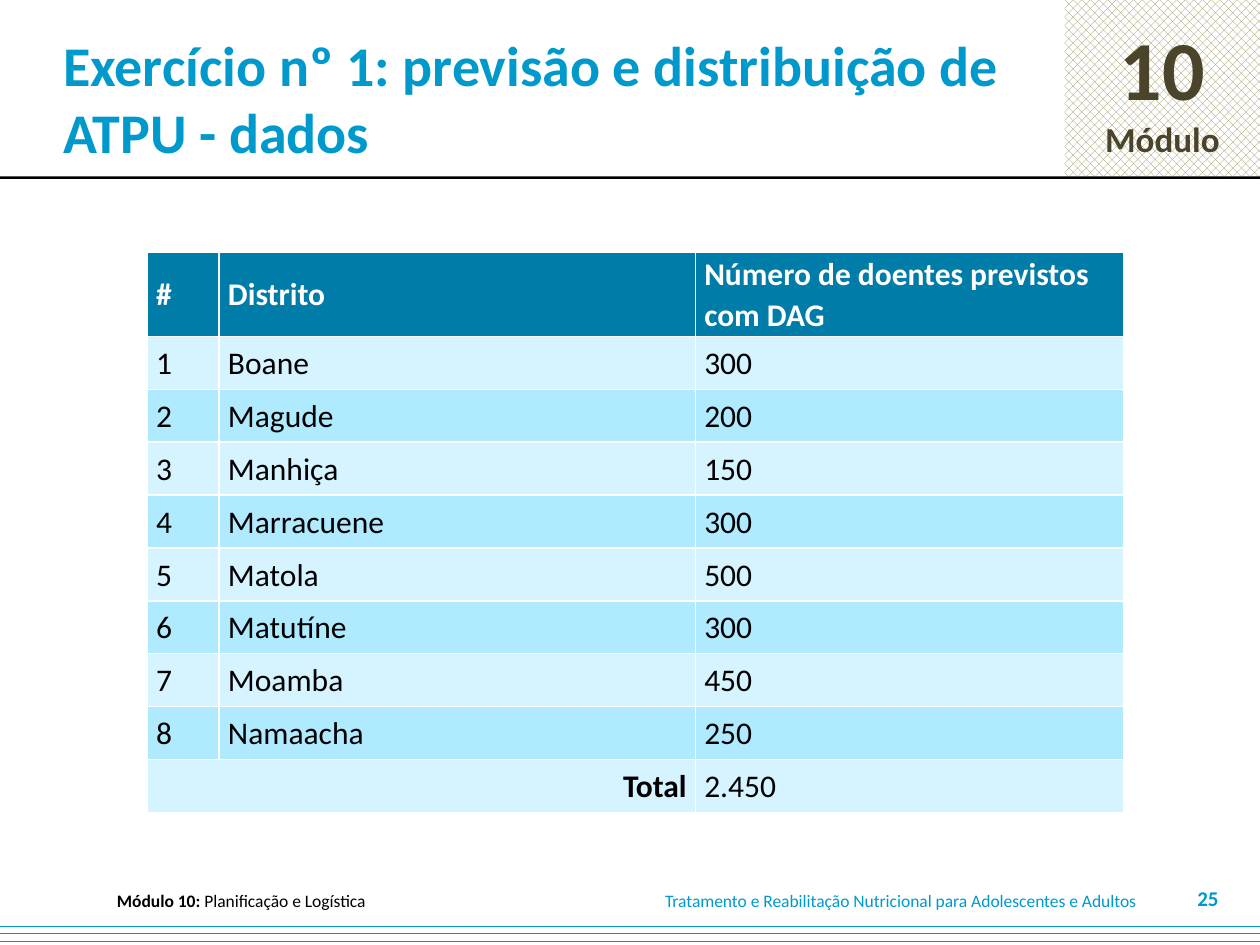
from dataclasses import dataclass

from lxml import etree
from pptx import Presentation
from pptx.dml.color import RGBColor
from pptx.enum.dml import MSO_PATTERN
from pptx.enum.shapes import MSO_SHAPE
from pptx.enum.text import MSO_ANCHOR, PP_ALIGN
from pptx.oxml.ns import qn
from pptx.util import Inches, Pt

LEFT, CENTER, RIGHT, JUSTIFY = PP_ALIGN.LEFT, PP_ALIGN.CENTER, PP_ALIGN.RIGHT, PP_ALIGN.JUSTIFY
MIDDLE = MSO_ANCHOR.MIDDLE
RECTANGLE = MSO_SHAPE.RECTANGLE
DOTS, DASHES = MSO_PATTERN.PERCENT_50, MSO_PATTERN.DASHED_HORIZONTAL

TITLE = "Exercício nº 1: previsão e distribuição de ATPU - dados"
MODULE_NUMBER, MODULE_LABEL = "10", "Módulo"
FOOTER_MODULE, FOOTER_TOPIC = "Módulo 10: ", "Planificação e Logística"
FOOTER_COURSE = "Tratamento e Reabilitação Nutricional para Adolescentes e Adultos"
PAGE_NUMBER = "25"
HEADER = ("#", "Distrito", "Número de doentes previstos com DAG")
DISTRICTS = [
    ("Boane ", "300"),
    ("Magude", "200"),
    ("Manhiça", "150"),
    ("Marracuene", "300"),
    ("Matola ", "500"),
    ("Matutíne", "300"),
    ("Moamba", "450"),
    ("Namaacha", "250"),
]
TOTAL = ("Total", "2.450")


@dataclass(frozen=True)
class Theme:
    font: str = "Calibri"
    accent: str = "0099CC"
    dark: str = "4A452A"
    hatch: str = "948A54"
    black: str = "000000"
    white: str = "FFFFFF"
    header: str = "007CA8"
    bands: tuple = ("D5F4FF", "AFEAFF")
    title: int = 32
    number: int = 48
    label: int = 20
    table: int = 18
    page: int = 12
    footer: int = 10


THEME = Theme()
WIDTH, HEIGHT = 10, 7.5
BADGE_LEFT, BAND_HEIGHT = 8.45, 1.4
STRIP_HEIGHT = 0.21
TABLE_LEFT, TABLE_TOP = 1.17, 2
COLUMNS = (0.57, 3.78, 3.4)
HEADER_HEIGHT, ROW_HEIGHT = 0.67, 0.42


def color(value):
    return RGBColor.from_string(value)


def write(para, text, *, size, ink, bold=False, align=LEFT):
    para.alignment = align
    span = para.add_run()
    span.text = text
    span.font.name = THEME.font
    span.font.size = Pt(size)
    span.font.bold = bold
    span.font.color.rgb = color(ink)


def set_frame(frame, insets):
    frame.word_wrap = True
    frame.vertical_anchor = MIDDLE
    frame.margin_left, frame.margin_top, frame.margin_right, frame.margin_bottom = map(Inches, insets)
    return frame


def add_text_box(page, place, insets=(0.1, 0, 0.1, 0)):
    box = page.shapes.add_textbox(*map(Inches, place))
    return set_frame(box.text_frame, insets).paragraphs[0]


def add_block(page, place, ink, pattern=None):
    block = page.shapes.add_shape(RECTANGLE, *map(Inches, place))
    block.shadow.inherit = False
    block.line.fill.background()
    if pattern is None:
        block.fill.solid()
    else:
        block.fill.patterned()
        block.fill.pattern = pattern
        block.fill.back_color.rgb = color(THEME.white)
    block.fill.fore_color.rgb = color(ink)
    return block


def add_borders(cell):
    properties = cell._tc.get_or_add_tcPr()
    for side in ("lnL", "lnR", "lnT", "lnB"):
        line = etree.SubElement(properties, qn(f"a:{side}"), w=str(Pt(1)))
        fill = etree.SubElement(line, qn("a:solidFill"))
        etree.SubElement(fill, qn("a:srgbClr"), val=THEME.white)


def fill_cell(cell, text, background, *, ink=THEME.black, bold=False, align=LEFT):
    add_borders(cell)
    cell.fill.solid()
    cell.fill.fore_color.rgb = color(background)
    cell.vertical_anchor = MIDDLE
    cell.margin_left = cell.margin_right = Inches(0.07)
    cell.margin_top = cell.margin_bottom = 0
    para = cell.text_frame.paragraphs[0]
    para.line_spacing = 1.05
    para.space_after = Pt(10)
    if text:
        write(para, text, size=THEME.table, ink=ink, bold=bold, align=align)


def add_frame(page):
    badge = add_block(page, (BADGE_LEFT, 0, WIDTH - BADGE_LEFT, BAND_HEIGHT), THEME.hatch, DOTS)
    frame = set_frame(badge.text_frame, (0.1, 0.05, 0.1, 0.05))
    write(frame.paragraphs[0], MODULE_NUMBER, size=THEME.number, ink=THEME.dark, bold=True, align=CENTER)
    write(frame.add_paragraph(), MODULE_LABEL, size=THEME.label, ink=THEME.dark, bold=True, align=CENTER)
    add_block(page, (-0.02, BAND_HEIGHT, WIDTH + 0.02, 0.02), THEME.black)
    add_block(page, (0, HEIGHT - STRIP_HEIGHT, WIDTH, STRIP_HEIGHT), THEME.accent, DASHES)

    course = add_text_box(page, (5.18, 7.05, 4.05, 0.2))
    write(course, FOOTER_COURSE, size=THEME.footer, ink=THEME.accent)
    module = add_text_box(page, (0.83, 7.05, 4.32, 0.2))
    write(module, FOOTER_MODULE, size=THEME.footer, ink=THEME.black, bold=True)
    write(module, FOOTER_TOPIC, size=THEME.footer, ink=THEME.black)
    title = add_text_box(page, (0, 0, 8.58, 1.55), (0.5, 0.05, 0.1, 0.05))
    write(title, TITLE, size=THEME.title, ink=THEME.accent, bold=True)
    number = add_text_box(page, (9.27, 7, 0.5, 0.25))
    write(number, PAGE_NUMBER, size=THEME.page, ink=THEME.accent, bold=True, align=RIGHT)


def add_district_table(page):
    body = [(str(index), *district) for index, district in enumerate(DISTRICTS, 1)]
    body.append((TOTAL[0], "", TOTAL[1]))
    heights = [HEADER_HEIGHT] + [ROW_HEIGHT] * len(body)
    place = (TABLE_LEFT, TABLE_TOP, sum(COLUMNS), sum(heights))
    table = page.shapes.add_table(len(heights), len(COLUMNS), *map(Inches, place)).table
    for column, width in zip(table.columns, COLUMNS):
        column.width = Inches(width)
    for row, height in zip(table.rows, heights):
        row.height = Inches(height)

    for column, text in enumerate(HEADER):
        fill_cell(table.cell(0, column), text, THEME.header, ink=THEME.white, bold=True)
    last = len(body)
    for row, texts in enumerate(body, 1):
        background = THEME.bands[(row - 1) % 2]
        for column, text in enumerate(texts):
            is_total = row == last and column == 0
            align = RIGHT if is_total else JUSTIFY if column == 1 else LEFT
            fill_cell(table.cell(row, column), text, background, bold=is_total, align=align)
    table.cell(last, 0).merge(table.cell(last, 1))


def main():
    deck = Presentation()
    deck.slide_width, deck.slide_height = Inches(WIDTH), Inches(HEIGHT)
    page = deck.slides.add_slide(deck.slide_layouts[6])
    add_frame(page)
    add_district_table(page)
    deck.save("out.pptx")


if __name__ == "__main__":
    main()
